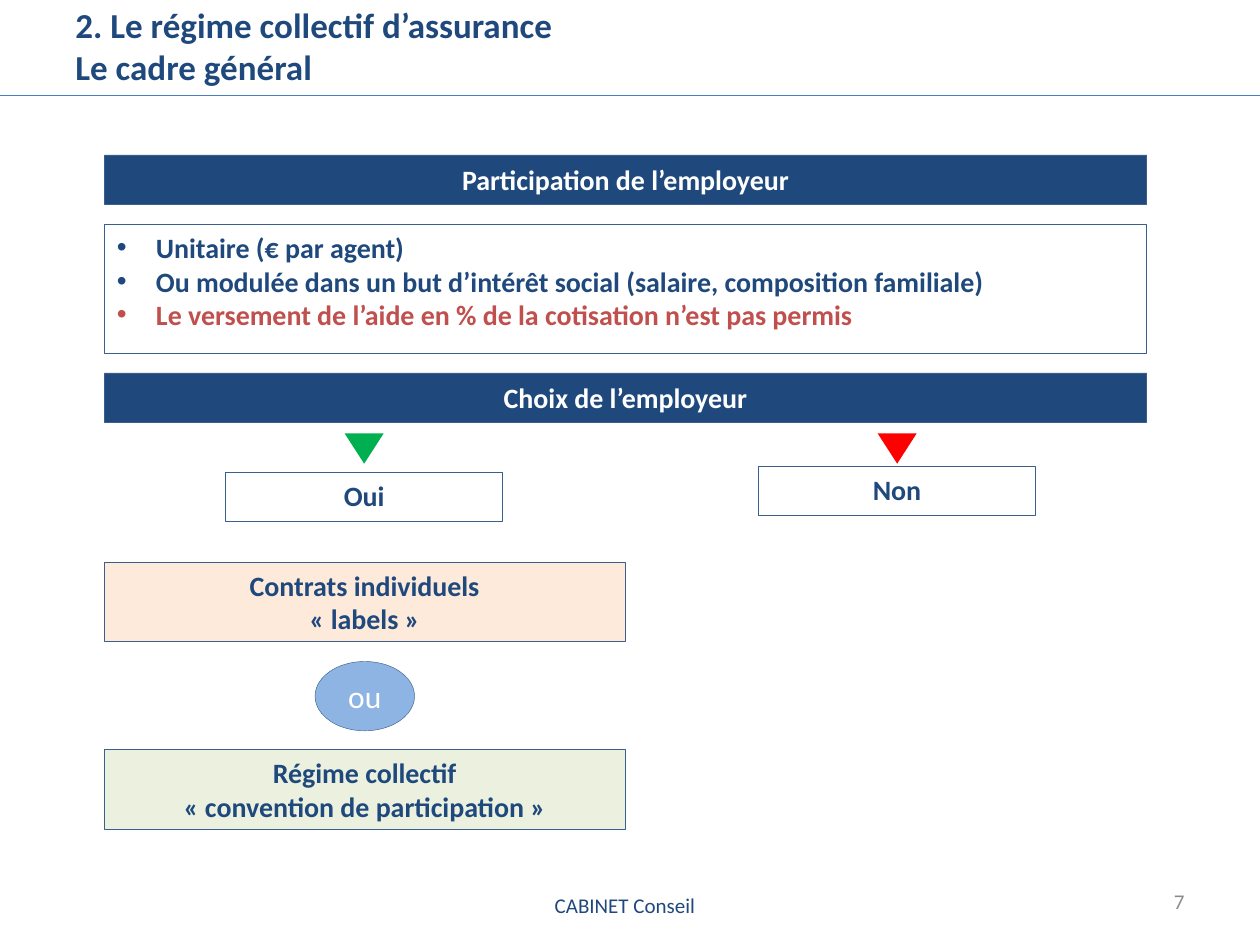
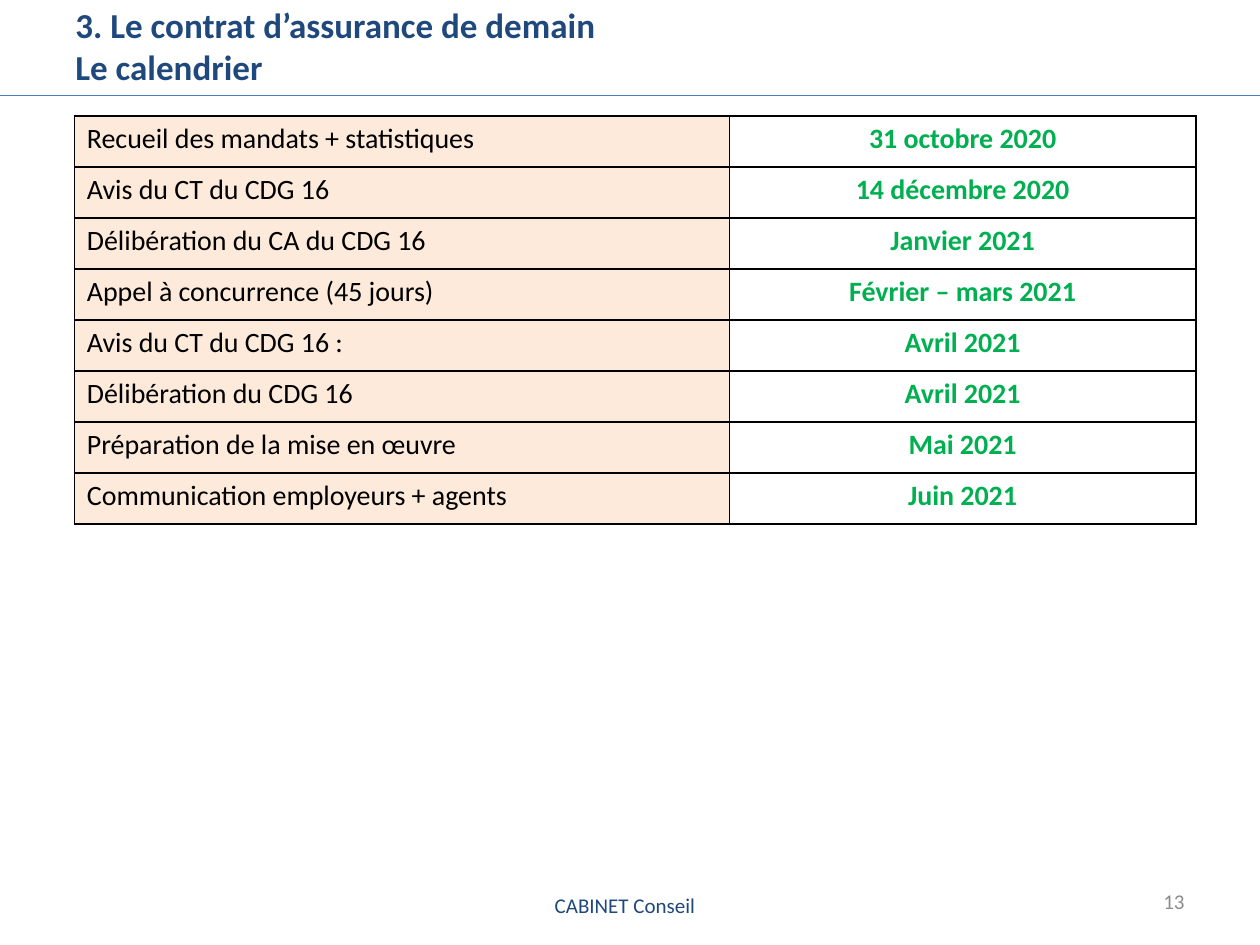
from lxml.etree import SubElement
from pptx import Presentation
from pptx.dml.color import RGBColor
from pptx.enum.shapes import MSO_CONNECTOR, MSO_SHAPE as Shape
from pptx.enum.text import MSO_ANCHOR as Anchor, PP_ALIGN as Align
from pptx.oxml.ns import qn
from pptx.util import Inches, Pt

FONT = "Calibri"
NAVY, BORDER, RULE = "1F497D", "3A5F8C", "4B7EBC"
PEACH, SAGE, SKY = "FDEADA", "EBF1DE", "8EB4E3"
GREEN, RED, BRICK = "00B050", "FF0000", "C0504D"
WHITE, BLACK, GREY = "FFFFFF", "000000", "8C8C8C"

LEFT, FULL_WIDTH = 0.83, 8.27
BAND_HEIGHT = 0.39
OPTION_WIDTH, OPTION_HEIGHT = 4.13, 0.63
ANSWER_WIDTH = 2.2
OUI_CENTER, NON_CENTER = 2.89, 7.12

CALENDAR = [
    ("Recueil des mandats + statistiques", "31 octobre 2020"),
    ("Avis du CT du CDG 16", "14 décembre 2020"),
    ("Délibération du CA du CDG 16", "Janvier 2021"),
    ("Appel à concurrence (45 jours)", "Février – mars 2021"),
    ("Avis du CT du CDG 16 :", "Avril 2021"),
    ("Délibération du CDG 16", "Avril 2021"),
    ("Préparation de la mise en œuvre", "Mai 2021"),
    ("Communication employeurs + agents", "Juin 2021"),
]


def rgb(color):
    """Turn a hex string into a colour."""
    return RGBColor.from_string(color)


def style(paragraph, size, color, bold=False, align=Align.LEFT):
    """Set the font and alignment of a paragraph."""
    paragraph.alignment = align
    font = paragraph.font
    font.name, font.size, font.bold = FONT, Pt(size), bold
    font.color.rgb = rgb(color)


def write(frame, lines, size, color, bold=False, align=Align.LEFT, anchor=Anchor.MIDDLE):
    """Fill a text frame with one paragraph per line."""
    frame.word_wrap = True
    frame.vertical_anchor = anchor
    for index, line in enumerate(lines):
        paragraph = frame.add_paragraph() if index else frame.paragraphs[0]
        paragraph.text = line
        style(paragraph, size, color, bold, align)


def add_label(slide, box, text, size, color, bold=False, align=Align.LEFT):
    """Add a plain text box."""
    label = slide.shapes.add_textbox(*map(Inches, box))
    write(label.text_frame, [text], size, color, bold, align)


def add_figure(slide, kind, box, fill, border=BORDER):
    """Add a flat filled shape, outlined unless border is None."""
    figure = slide.shapes.add_shape(kind, *map(Inches, box))
    figure.shadow.inherit = False
    figure.fill.solid()
    figure.fill.fore_color.rgb = rgb(fill)
    if border:
        figure.line.color.rgb = rgb(border)
        figure.line.width = Pt(0.25)
    else:
        figure.line.fill.background()
    return figure


def add_band(slide, top, text):
    """Add a navy heading band."""
    band = add_figure(slide, Shape.RECTANGLE, (LEFT, top, FULL_WIDTH, BAND_HEIGHT), NAVY)
    write(band.text_frame, [text], 16, WHITE, True, Align.CENTER)


def add_box(slide, box, lines, fill=WHITE, align=Align.CENTER):
    """Add an outlined box with bold navy text from its top."""
    outlined = add_figure(slide, Shape.RECTANGLE, box, fill)
    write(outlined.text_frame, lines, 16, NAVY, True, align, Anchor.TOP)
    return outlined


def add_bullet(paragraph):
    """Give a paragraph a hanging round bullet."""
    properties = paragraph._p.get_or_add_pPr()
    properties.set("marL", str(Inches(0.31)))
    properties.set("indent", str(-Inches(0.31)))
    SubElement(properties, qn("a:buFont"), typeface="Arial")
    SubElement(properties, qn("a:buChar"), char="•")


def add_answer(slide, center, top, text, color):
    """Add an answer box under its downward triangle."""
    triangle = add_figure(slide, Shape.ISOSCELES_TRIANGLE,
                          (center - 0.155, 3.44, 0.31, 0.24), color, None)
    triangle.rotation = 180
    add_box(slide, (center - ANSWER_WIDTH / 2, top, ANSWER_WIDTH, BAND_HEIGHT), [text])


def add_frame(deck, title, number):
    """Add a slide with the shared title, rule and footer."""
    slide = deck.slides.add_slide(deck.slide_layouts[6])
    add_label(slide, (2.95, 6.98, 4.02, 0.4), "CABINET Conseil", 12, NAVY, align=Align.CENTER)
    rule = slide.shapes.add_connector(MSO_CONNECTOR.STRAIGHT, 0, Inches(0.76),
                                      deck.slide_width, Inches(0.76))
    rule.line.color.rgb = rgb(RULE)
    rule.line.width = Pt(0.75)
    SubElement(rule._element.spPr, qn("a:effectLst"))
    add_label(slide, (0.5, 0.13, 9, 0.46), title, 20, NAVY, True)
    add_label(slide, (7.17, 6.95, 2.33, 0.4), str(number), 12, GREY, align=Align.RIGHT)
    return slide


def add_borders(cell):
    """Draw a thin black line on each side of a cell."""
    properties = cell._tc.get_or_add_tcPr()
    for side in ("lnL", "lnR", "lnT", "lnB"):
        edge = SubElement(properties, qn(f"a:{side}"), w=str(Pt(1)))
        SubElement(SubElement(edge, qn("a:solidFill")), qn("a:srgbClr"), val=BLACK)


def add_calendar(slide):
    """Add the table of steps and dates."""
    table = slide.shapes.add_table(len(CALENDAR), 2, Inches(0.59), Inches(0.92),
                                   Inches(8.9), Inches(3.24)).table
    table.first_row = table.horz_banding = False
    for column, width in zip(table.columns, (5.2, 3.7)):
        column.width = Inches(width)
    for row, (step, date) in enumerate(CALENDAR):
        step_cell, date_cell = table.cell(row, 0), table.cell(row, 1)
        for cell in (step_cell, date_cell):
            add_borders(cell)
        step_cell.fill.solid()
        step_cell.fill.fore_color.rgb = rgb(PEACH)
        date_cell.fill.background()
        step_cell.text, date_cell.text = step, date
        style(step_cell.text_frame.paragraphs[0], 16, BLACK)
        style(date_cell.text_frame.paragraphs[0], 16, GREEN, True, Align.CENTER)


def build_framework(deck):
    """Build the slide on the employer's contribution and choice."""
    slide = add_frame(deck, "2. Le régime collectif d’assurance\vLe cadre général", 7)
    add_band(slide, 1.23, "Participation de l’employeur")
    rules = add_box(slide, (LEFT, 1.78, FULL_WIDTH, 1.02), [
        "Unitaire (€ par agent)",
        "Ou modulée dans un but d’intérêt social (salaire, composition familiale)",
        "Le versement de l’aide en % de la cotisation n’est pas permis",
    ], align=Align.LEFT)
    for paragraph in rules.text_frame.paragraphs:
        add_bullet(paragraph)
    paragraph.font.color.rgb = rgb(BRICK)

    add_band(slide, 2.96, "Choix de l’employeur")
    add_answer(slide, OUI_CENTER, 3.75, "Oui", GREEN)
    add_answer(slide, NON_CENTER, 3.7, "Non", RED)

    add_box(slide, (LEFT, 4.46, OPTION_WIDTH, OPTION_HEIGHT),
            ["Contrats individuels", "« labels »"], PEACH)
    either = add_figure(slide, Shape.OVAL, (2.5, 5.25, 0.79, 0.55), SKY)
    write(either.text_frame, ["ou"], 18, WHITE, align=Align.CENTER)
    add_box(slide, (LEFT, 5.95, OPTION_WIDTH, OPTION_HEIGHT),
            ["Régime collectif", "« convention de participation »"], SAGE)


def main():
    """Build and save the two slides."""
    deck = Presentation()
    deck.slide_width, deck.slide_height = Inches(10), Inches(7.5)
    build_framework(deck)
    add_calendar(add_frame(deck, "3. Le contrat d’assurance de demain\vLe calendrier", 13))
    deck.save("out.pptx")


if __name__ == "__main__":
    main()
